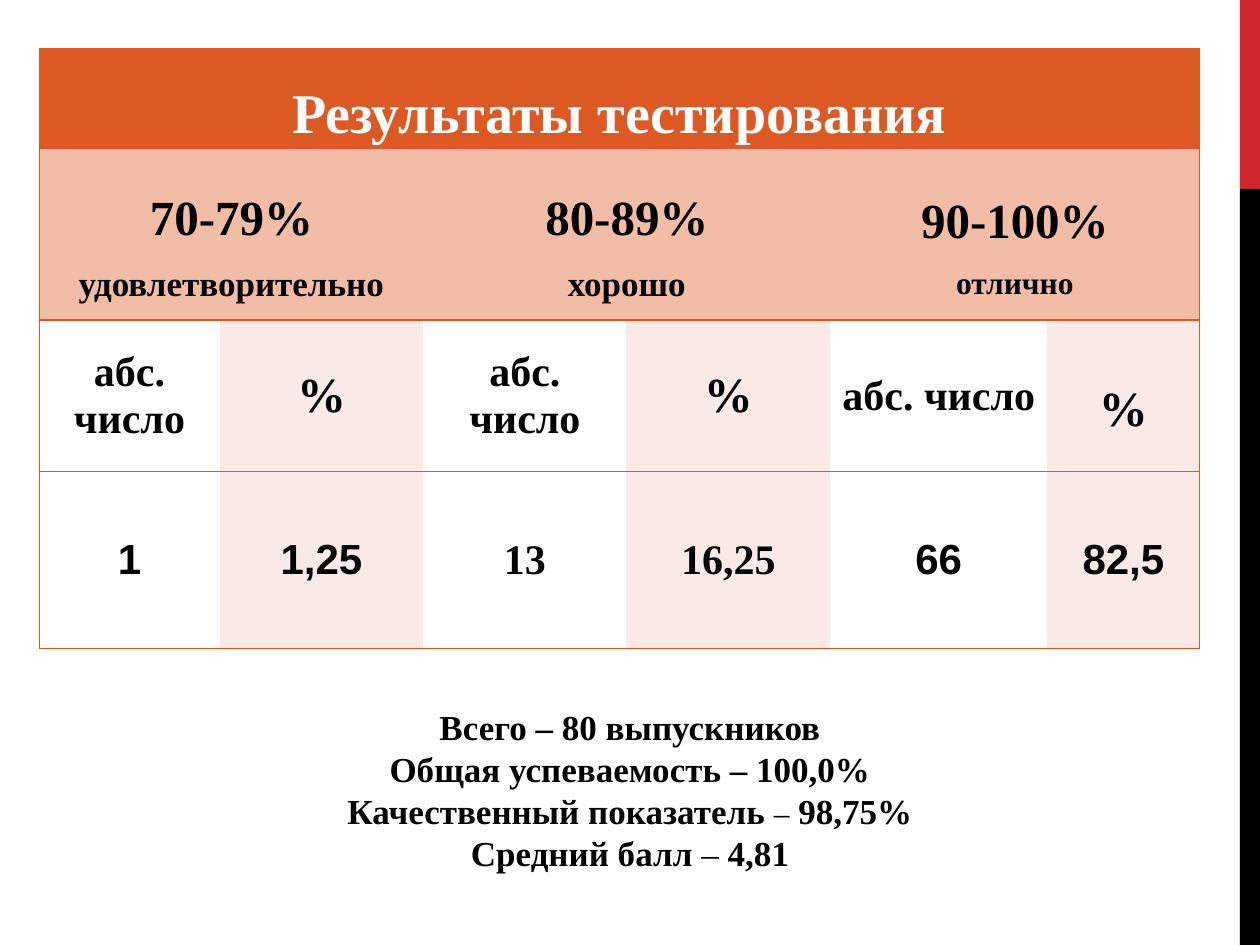
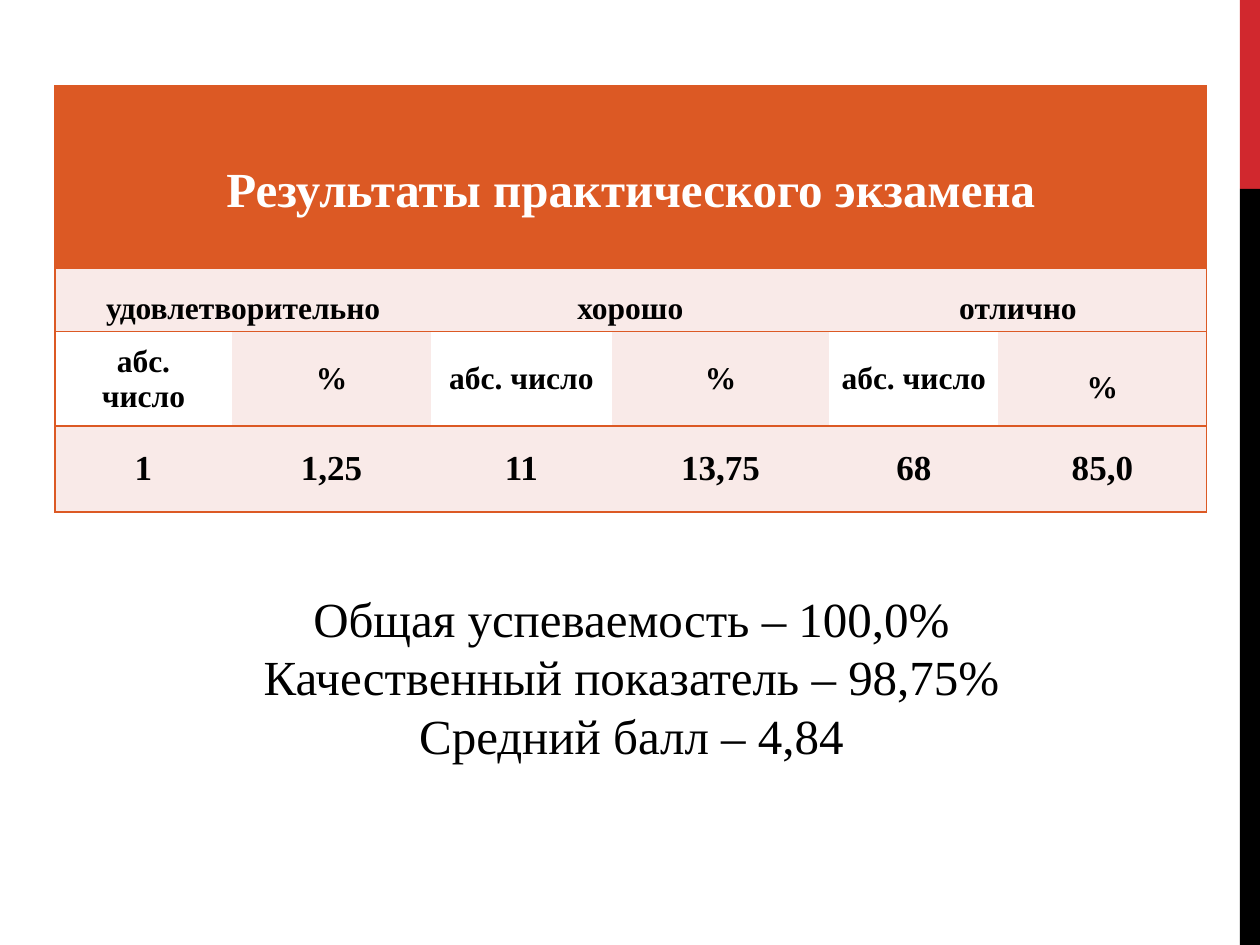
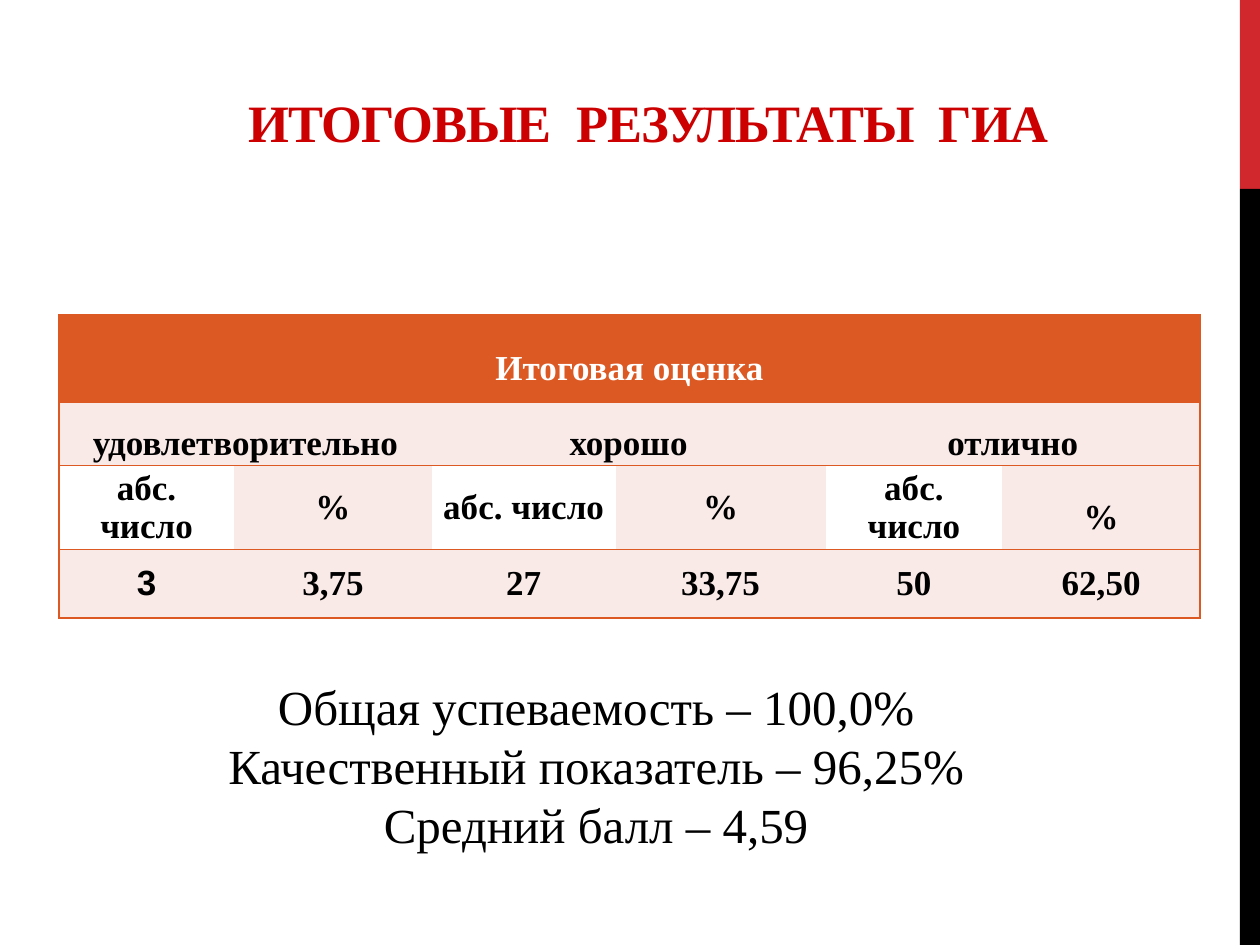
from dataclasses import dataclass

from lxml import etree
from pptx import Presentation
from pptx.dml.color import RGBColor
from pptx.enum.shapes import MSO_SHAPE
from pptx.enum.text import MSO_ANCHOR, MSO_AUTO_SIZE, PP_ALIGN
from pptx.oxml.ns import qn
from pptx.util import Pt

RECTANGLE = MSO_SHAPE.RECTANGLE
CENTER = PP_ALIGN.CENTER
MIDDLE = MSO_ANCHOR.MIDDLE
BOTTOM = MSO_ANCHOR.BOTTOM
GROW = MSO_AUTO_SIZE.SHAPE_TO_FIT_TEXT

SERIF, SANS = "Times New Roman", "Arial"
RED, BLACK, WHITE, TITLE_RED = "D1282E", "000000", "FFFFFF", "CC0000"
ORANGE, PEACH, TINT = "DC5924", "F1BDA7", "F9EAE8"
SLIDE_WIDTH, SLIDE_HEIGHT = 720, 540
BAND_WIDTH, BAND_SPLIT = 11.5, 108
CELL_MARGIN = 5.4
GRADES = ("удовлетворительно", "хорошо", "отлично")
COUNT, COUNT_SPLIT, SHARE = "абс. число", "абс.\nчисло", "%"


@dataclass
class Results:
    heading: str
    heading_size: float
    grades: tuple
    grade_sizes: tuple
    grade_fill: str
    counts: tuple
    unit_sizes: tuple
    values: tuple
    value_size: float
    value_fills: tuple
    sans_columns: tuple
    columns: tuple
    rows: tuple


def color(value):
    return RGBColor.from_string(value)


def style(run, size, ink=BLACK, bold=False, font=SERIF):
    run.font.name = font
    run.font.size = Pt(size)
    run.font.bold = bold
    run.font.color.rgb = color(ink)


def side_band(slide):
    left = SLIDE_WIDTH - BAND_WIDTH
    for top, bottom, fill in ((0, BAND_SPLIT, RED), (BAND_SPLIT, SLIDE_HEIGHT, BLACK)):
        band = slide.shapes.add_shape(
            RECTANGLE, Pt(left), Pt(top), Pt(BAND_WIDTH), Pt(bottom - top))
        band.shadow.inherit = False
        band.fill.solid()
        band.fill.fore_color.rgb = color(fill)
        band.line.fill.background()


def set_borders(cell, left, right):
    properties = cell._tc.get_or_add_tcPr()
    sides = (("a:lnL", left), ("a:lnR", right), ("a:lnT", True), ("a:lnB", True))
    for position, (tag, visible) in enumerate(sides):
        line = etree.Element(qn(tag), w=str(Pt(1)))
        if visible:
            fill = etree.SubElement(line, qn("a:solidFill"))
            etree.SubElement(fill, qn("a:srgbClr"), val=ORANGE)
        else:
            etree.SubElement(line, qn("a:noFill"))
        properties.insert(position, line)


def write_cell(cell, text, sizes, ink=BLACK, font=SERIF, spacing=1.0):
    cell.vertical_anchor = MIDDLE
    cell.margin_left = cell.margin_right = Pt(CELL_MARGIN)
    cell.margin_top = cell.margin_bottom = 0
    cell.text_frame.text = text
    for index, paragraph in enumerate(cell.text_frame.paragraphs):
        paragraph.alignment = CENTER
        paragraph.line_spacing = spacing
        style(paragraph.runs[0], sizes[index % len(sizes)], ink, True, font)


def fill_row(table, row, span, fills):
    last = len(table.columns)
    for start in range(0, last, span):
        for column in range(start, start + span):
            cell = table.cell(row, column)
            cell.fill.solid()
            cell.fill.fore_color.rgb = color(fills[column % len(fills)])
            set_borders(cell, start == 0, start + span == last)
        if span > 1:
            table.cell(row, start).merge(table.cell(row, start + span - 1))


def results_table(slide, left, top, results):
    frame = slide.shapes.add_table(
        len(results.rows), len(results.columns), Pt(left), Pt(top),
        Pt(sum(results.columns)), Pt(sum(results.rows)))
    table = frame.table
    table.first_row = table.horz_banding = False
    for column, width in zip(table.columns, results.columns):
        column.width = Pt(width)
    for row, height in zip(table.rows, results.rows):
        row.height = Pt(height)

    fill_row(table, 0, 6, (ORANGE,))
    fill_row(table, 1, 2, (results.grade_fill,))
    fill_row(table, 2, 1, (WHITE, TINT))
    fill_row(table, 3, 1, results.value_fills)

    write_cell(table.cell(0, 0), results.heading, (results.heading_size,), WHITE, spacing=1.5)
    count_size, share_size = results.unit_sizes
    for index, grade in enumerate(results.grades):
        column = 2 * index
        write_cell(table.cell(1, column), grade, results.grade_sizes[index], spacing=1.5)
        write_cell(table.cell(2, column), results.counts[index], (count_size,))
        write_cell(table.cell(2, column + 1), SHARE, (share_size,),
                   spacing=1.5 if index == 2 else 1.0)
    for column, value in enumerate(results.values):
        font = SANS if column in results.sans_columns else SERIF
        write_cell(table.cell(3, column), value, (results.value_size,), font=font)


def text_box(slide, box):
    frame = slide.shapes.add_textbox(*(Pt(length) for length in box)).text_frame
    frame.word_wrap = True
    return frame


def summary(slide, box, lines):
    frame = text_box(slide, box)
    frame.auto_size = GROW
    for index, line in enumerate(lines):
        paragraph = frame.add_paragraph() if index else frame.paragraphs[0]
        paragraph.alignment = CENTER
        for text, size, bold in line:
            run = paragraph.add_run()
            run.text = text
            style(run, size, bold=bold)


def plain_summary(slide, left, top, quality, average):
    lines = ("Общая успеваемость – 100,0%",
             f"Качественный показатель – {quality}",
             f"Средний балл – {average}")
    summary(slide, (left, top, 561.6, 109.5), [[(line, 28, False)] for line in lines])


def slide_title(slide, box, words):
    frame = text_box(slide, box)
    frame.vertical_anchor = BOTTOM
    paragraph = frame.paragraphs[0]
    paragraph.alignment = CENTER
    for index, word in enumerate(words):
        parts = ((" ", 630), (word, -60)) if index else ((word, -60),)
        for text, tracking in parts:
            run = paragraph.add_run()
            run.text = text
            style(run, 30, TITLE_RED, True)
            run.font._element.set("spc", str(tracking))


def testing_slide(slide):
    ranges = ("70-79%", "80-89%", "90-100%")
    results_table(slide, 22.5, 28, Results(
        heading="Результаты тестирования", heading_size=32,
        grades=tuple(f"{span}\n{grade}" for span, grade in zip(ranges, GRADES)),
        grade_sizes=((28, 20), (28, 20), (28, 18)), grade_fill=PEACH,
        counts=(COUNT_SPLIT, COUNT, COUNT), unit_sizes=(24, 28),
        values=("1", "1,25", "13", "16,25", "66", "82,5"), value_size=24,
        value_fills=(WHITE, TINT), sans_columns=(0, 1, 4, 5),
        columns=(103, 116.5, 116, 116.5, 124, 87), rows=(57, 98, 86.5, 101)))
    summary(slide, (39.6, 399.6, 640.8, 104.4), (
        [("Всего – 80 выпускников", 20, True)],
        [("Общая успеваемость – 100,0%", 20, True)],
        [("Качественный показатель ", 20, True), ("–", 18, False),
         (" ", 20, False), ("98,75%", 20, True)],
        [("Средний балл", 20, True), (" – ", 20, False), ("4,81", 20, True)]))


def practice_slide(slide):
    results_table(slide, 31.5, 49, Results(
        heading="Результаты практического экзамена", heading_size=28,
        grades=GRADES, grade_sizes=((18,),) * 3, grade_fill=TINT,
        counts=(COUNT_SPLIT, COUNT, COUNT), unit_sizes=(18, 18),
        values=("1", "1,25", "11", "13,75", "68", "85,0"), value_size=20,
        value_fills=(TINT,), sans_columns=(),
        columns=(101, 114, 103, 124.5, 96.5, 119), rows=(104.5, 36, 54, 49)))
    plain_summary(slide, 80, 332.5, "98,75%", "4,84")


def final_slide(slide):
    slide_title(slide, (50.4, 22.3, 640.8, 68.4), ("ИТОГОВЫЕ", "РЕЗУЛЬТАТЫ", "ГИА"))
    results_table(slide, 33.8, 180, Results(
        heading="Итоговая оценка", heading_size=20,
        grades=GRADES, grade_sizes=((20,),) * 3, grade_fill=TINT,
        counts=(COUNT_SPLIT, COUNT, COUNT), unit_sizes=(20, 20),
        values=("3", "3,75", "27", "33,75", "50", "62,50"), value_size=20,
        value_fills=(TINT,), sans_columns=(0,),
        columns=(100, 113, 105, 120, 101, 113), rows=(50, 17, 30, 39)))
    plain_summary(slide, 59.8, 383, "96,25%", "4,59")


def main():
    deck = Presentation()
    deck.slide_width, deck.slide_height = Pt(SLIDE_WIDTH), Pt(SLIDE_HEIGHT)
    for build in (testing_slide, practice_slide, final_slide):
        slide = deck.slides.add_slide(deck.slide_layouts[6])
        side_band(slide)
        build(slide)
    deck.save("out.pptx")


if __name__ == "__main__":
    main()
